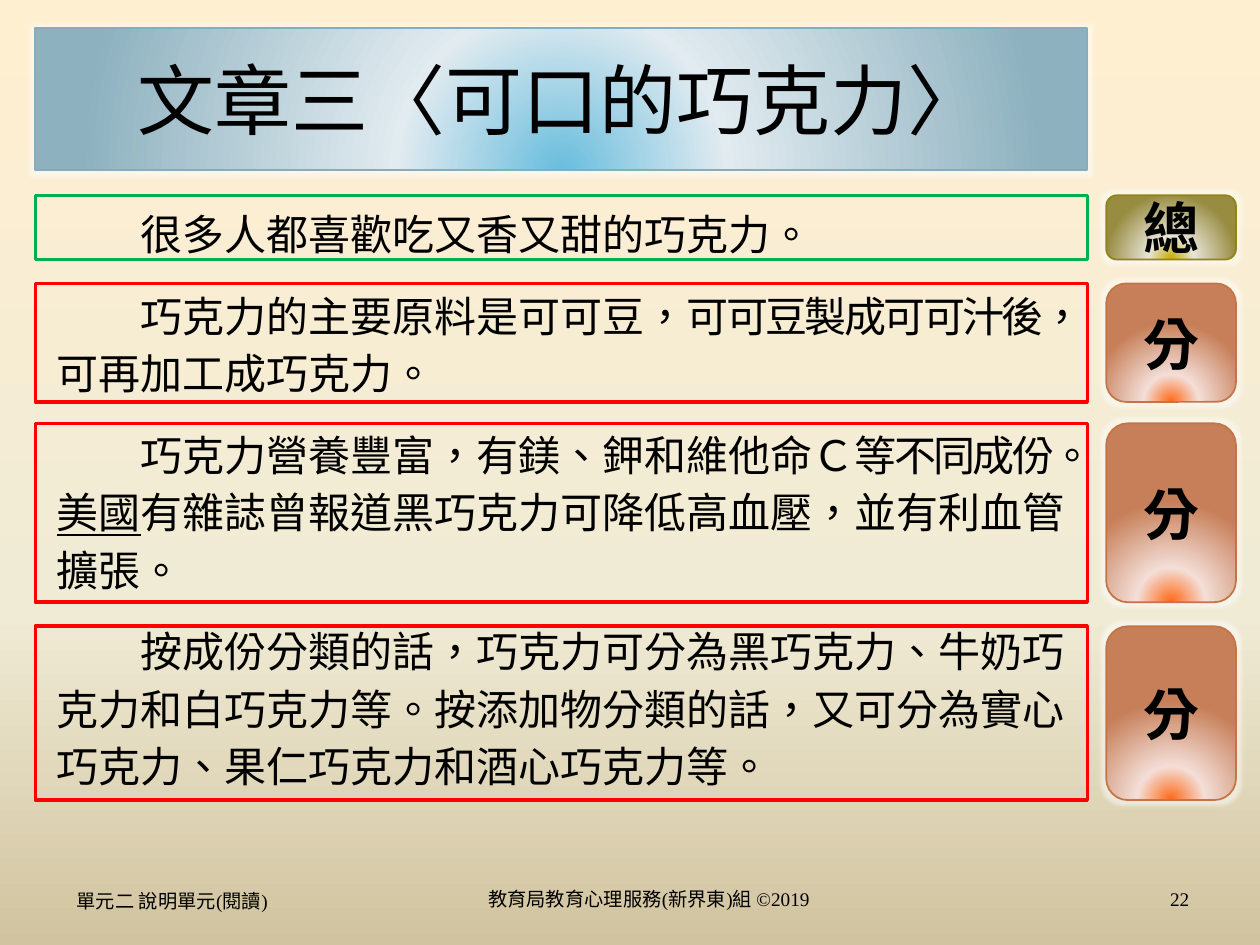
from dataclasses import dataclass

from lxml import etree
from pptx import Presentation
from pptx import util as u
from pptx.dml.color import RGBColor
from pptx.enum import shapes, text
from pptx.oxml import ns

Stops = tuple[tuple[int, str], ...]


@dataclass(frozen=True)
class Theme:
    latin: str = "Times New Roman"
    cjk: str = "Noto Sans CJK SC"
    ink: str = "000000"
    glow: str = "FFFFFF"
    title_size: int = 44
    label_size: int = 32
    body_size: int = 24
    footer_size: int = 11
    background: Stops = ((0, "FFEFD1"), (65, "F0EBD5"), (100, "D1C39F"))


@dataclass(frozen=True)
class Style:
    """Outline and radial fill of a glowing panel."""
    line: str
    stops: Stops


@dataclass(frozen=True)
class Run:
    text: str
    spacing: float = 0
    underline: bool = False


@dataclass(frozen=True)
class Section:
    top: float
    height: float
    frame: str
    label: str
    style: Style
    runs: tuple[Run, ...]


@dataclass(frozen=True)
class Footer:
    left: float
    width: float
    text: str
    align: text.PP_ALIGN
    anchor: text.MSO_ANCHOR
    inset: float = 0.1


T = Theme()
BLUE = Style("85ADBC", ((0, "69BDDD"), (31, "E1EBF0"), (91, "8DB1BF")))
OLIVE = Style("918415", ((0, "C6AD00"), (31, "E8E5D8"), (91, "988C41")))
ORANGE = Style("C47546", ((0, "FF6917"), (31, "F4DFD8"), (91, "C77F59")))
GREEN, RED = "00B050", "FF0000"

# Two columns: framed paragraphs on the left, their labels on the right
FRAME_X, FRAME_W = 0.28, 8.35
LABEL_X, LABEL_W = 8.78, 1.03
FOOTER_Y, FOOTER_H = 6.98, 0.31

SECTIONS = (
    Section(1.55, 0.51, GREEN, "總", OLIVE, (
        Run("　　很多人都喜歡吃又香又甜的巧克力。"),)),
    Section(2.25, 0.94, RED, "分", ORANGE, (
        Run("　　巧克力的主要原料是可可豆，"),
        Run("可可豆製成可可汁後，", spacing=-1.5),
        Run("可再加工成巧克力。"))),
    Section(3.36, 1.42, RED, "分", ORANGE, (
        Run("　　巧克力營養豐富，有鎂、鉀和維他命Ｃ"),
        Run("等不同成份。", spacing=-1.5),
        Run("美國", underline=True),
        Run("有雜誌曾報道黑巧克力可降低高血壓，並有利血管擴張。"))),
    Section(4.97, 1.38, RED, "分", ORANGE, (
        Run("　　按成份分類的話，巧克力可分為黑巧克力、牛奶巧克力和白巧克力等。"
            "按添加物分類的話，又可分為實心巧克力、果仁巧克力和酒心巧克力等。"),)),
)
FOOTERS = (
    Footer(0.51, 2, "單元二 說明單元(閱讀)", text.PP_ALIGN.LEFT, text.MSO_ANCHOR.BOTTOM),
    Footer(3.11, 4.08, "教育局教育心理服務(新界東)組 ©2019",
           text.PP_ALIGN.CENTER, text.MSO_ANCHOR.MIDDLE),
    Footer(8.49, 1, "22", text.PP_ALIGN.RIGHT, text.MSO_ANCHOR.MIDDLE, 0.05),
)


def sub(parent, tag: str, **attrs):
    return etree.SubElement(parent, ns.qn(tag), {k: str(v) for k, v in attrs.items()})


def set_gradient(owner, fill, stops: Stops, radial: bool) -> None:
    """Give owner's XML a gradient: radial from the bottom centre, or downwards."""
    fill.background()
    none = owner.find(ns.qn("a:noFill"))
    grad = etree.Element(ns.qn("a:gradFill"), rotWithShape="1")
    gs_list = sub(grad, "a:gsLst")
    for pos, color in stops:
        sub(sub(gs_list, "a:gs", pos=pos * 1000), "a:srgbClr", val=color)
    if radial:
        sub(sub(grad, "a:path", path="circle"), "a:fillToRect",
            l=50000, t=150000, r=50000, b=0)
    else:
        sub(grad, "a:lin", ang=90 * 60000, scaled=0)
    owner.replace(none, grad)


def set_line(sp, color: str, width: float) -> None:
    sp.line.color.rgb = RGBColor.from_string(color)
    sp.line.width = u.Pt(width)


def place(sp, left: float, top: float, width: float, height: float) -> None:
    sp.left, sp.top, sp.width, sp.height = map(u.Inches, (left, top, width, height))


def style_panel(sp, style: Style) -> None:
    props = sp.element.spPr
    set_gradient(props, sp.fill, style.stops, radial=True)
    set_line(sp, style.line, 1)
    sp.shadow.inherit = False
    glow = sub(props.find(ns.qn("a:effectLst")), "a:glow", rad=u.Pt(5))
    sub(sub(glow, "a:srgbClr", val=T.glow), "a:alpha", val=50000)


def add_run(p, run: Run, size: int, latin: str, bold: bool = False) -> None:
    r = p.add_run()
    r.text = run.text
    f = r.font
    f.size, f.name, f.bold = u.Pt(size), latin, bold
    f.color.rgb = RGBColor.from_string(T.ink)
    if run.underline:
        f.underline = True
    props = r._r.get_or_add_rPr()
    props.set("lang", "zh-TW")
    if run.spacing:
        props.set("spc", str(int(run.spacing * 100)))
    props.find(ns.qn("a:latin")).addnext(etree.Element(ns.qn("a:ea"), typeface=T.cjk))


def set_text(sp, content: str, size: int, latin: str, bold: bool = False,
             align=text.PP_ALIGN.CENTER, anchor=text.MSO_ANCHOR.MIDDLE) -> None:
    tf = sp.text_frame
    tf.word_wrap, tf.auto_size = True, text.MSO_AUTO_SIZE.NONE
    tf.vertical_anchor = anchor
    tf.paragraphs[0].alignment = align
    add_run(tf.paragraphs[0], Run(content), size, latin, bold)


def fill_body(sp) -> None:
    place(sp, 0.35, 1.55, 8.43, 5.59)
    tf = sp.text_frame
    tf.auto_size = text.MSO_AUTO_SIZE.NONE
    for i, section in enumerate(SECTIONS):
        p = tf.add_paragraph() if i else tf.paragraphs[0]
        p.line_spacing = 1.14
        p.space_before, p.space_after = u.Pt(0.2 * T.body_size), u.Pt(9)
        props = p._p.get_or_add_pPr()
        props.set("marL", "0")
        props.set("indent", "0")
        sub(props, "a:buNone")
        for run in section.runs:
            add_run(p, run, T.body_size, T.latin)


def add_section(slide, section: Section) -> None:
    frame = slide.shapes.add_shape(shapes.MSO_SHAPE.RECTANGLE, 0, 0, 0, 0)
    place(frame, FRAME_X, section.top, FRAME_W, section.height)
    frame.fill.background()
    set_line(frame, section.frame, 2)
    frame.shadow.inherit = False

    label = slide.shapes.add_shape(shapes.MSO_SHAPE.ROUNDED_RECTANGLE, 0, 0, 0, 0)
    place(label, LABEL_X, section.top, LABEL_W, section.height)
    style_panel(label, section.style)
    set_text(label, section.label, T.label_size, T.cjk, bold=True)


def add_footer(slide, footer: Footer) -> None:
    box = slide.shapes.add_textbox(0, 0, 0, 0)
    place(box, footer.left, FOOTER_Y, footer.width, FOOTER_H)
    box.text_frame.margin_left = box.text_frame.margin_right = u.Inches(footer.inset)
    set_text(box, footer.text, T.footer_size, T.latin,
             align=footer.align, anchor=footer.anchor)


def main() -> None:
    prs = Presentation()
    prs.slide_width, prs.slide_height = u.Inches(10), u.Inches(7.5)
    slide = prs.slides.add_slide(prs.slide_layouts[1])
    fill = slide.background.fill
    set_gradient(next(slide.element.iter(ns.qn("p:bgPr"))), fill, T.background, radial=False)

    title, body = slide.placeholders
    place(title, FRAME_X, 0.22, FRAME_W, 1.13)
    style_panel(title, BLUE)
    set_text(title, "文章三〈可口的巧克力〉", T.title_size, T.cjk)
    fill_body(body)
    for footer in FOOTERS:
        add_footer(slide, footer)
    for section in SECTIONS:
        add_section(slide, section)
    prs.save("out.pptx")


if __name__ == "__main__":
    main()
